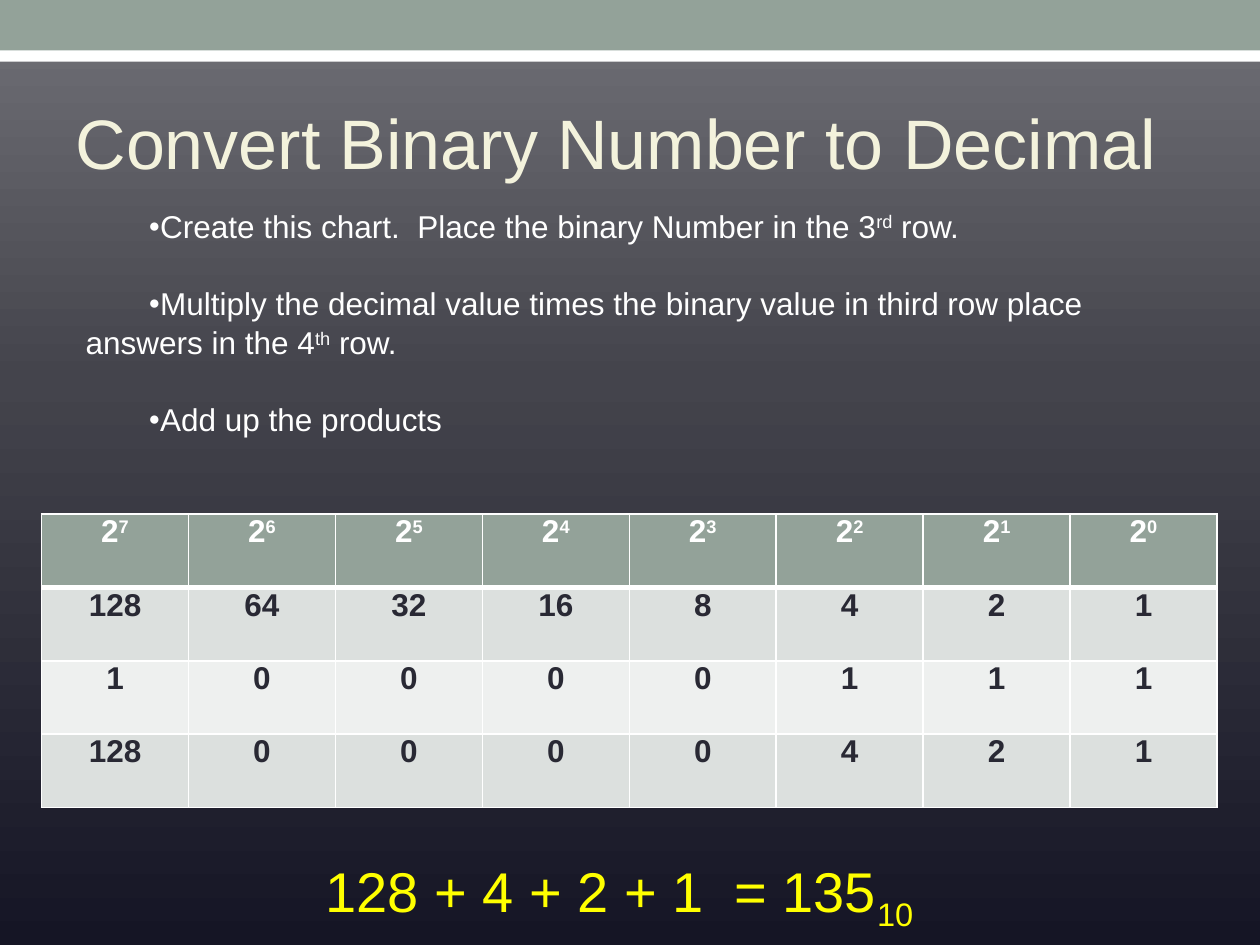
from lxml.etree import SubElement
from pptx import Presentation
from pptx.dml.color import RGBColor
from pptx.enum.shapes import MSO_SHAPE
from pptx.enum.text import MSO_ANCHOR, MSO_AUTO_SIZE, PP_ALIGN
from pptx.oxml.ns import qn
from pptx.util import Inches, Pt

WHITE = RGBColor(0xFF, 0xFF, 0xFF)
SAGE = RGBColor(0x93, 0xA2, 0x99)
CREAM = RGBColor(0xF3, 0xF2, 0xDC)
YELLOW = RGBColor(0xFF, 0xFF, 0x00)
DARK = RGBColor(0x29, 0x29, 0x34)
BAND_DARK = RGBColor(0xDC, 0xE0, 0xDE)
BAND_LIGHT = RGBColor(0xEE, 0xF0, 0xEF)
BACKGROUND_STOPS = [(0, RGBColor(0x71, 0x71, 0x77)),
                    (40, RGBColor(0x44, 0x44, 0x4C)),
                    (100, RGBColor(0x15, 0x15, 0x25))]
FONT = "Arial"

# Text is a list of (words, baseline shift in percent).
TITLE = [("Convert Binary Number to Decimal", 0)]
STEPS = [
    [("Create this chart.  Place the binary Number in the 3", 0), ("rd", 30), (" row.", 0)],
    [("Multiply the decimal value times the binary value in third row place "
      "answers in the 4", 0), ("th", 30), (" row.", 0)],
    [("Add up the products", 0)],
]
RESULT = [("128 + 4 + 2 + 1  = 135", 0), ("10", -25)]
BITS = [1, 0, 0, 0, 0, 1, 1, 1]

powers = list(range(len(BITS) - 1, -1, -1))
place_values = [2 ** power for power in powers]
products = [bit * value for bit, value in zip(BITS, place_values)]
TABLE_ROWS = [[[("2", 0), (str(power), 30)] for power in powers]] + [
    [[(str(number), 0)] for number in numbers]
    for numbers in (place_values, BITS, products)]
ROW_FILLS = [SAGE, BAND_DARK, BAND_LIGHT, BAND_DARK]


def add_runs(paragraph, parts, size, color, bold=False):
    for words, baseline in parts:
        run = paragraph.add_run()
        run.text = words
        run.font.name = FONT
        run.font.size = Pt(size)
        run.font.bold = bold
        run.font.color.rgb = color
        if baseline:
            run.font._element.set("baseline", str(baseline * 1000))


def place(shape, left, top, width, height):
    shape.left, shape.top = Inches(left), Inches(top)
    shape.width, shape.height = Inches(width), Inches(height)


def add_color(parent, color):
    return SubElement(parent, qn("a:srgbClr"), val=str(color))


def paint_background(slide):
    fill = slide.background.fill
    fill.gradient()
    fill.gradient_angle = 270
    stops = slide.background._cSld.find(".//" + qn("a:gsLst"))
    for stop in list(stops):
        stops.remove(stop)
    for position, color in BACKGROUND_STOPS:
        add_color(SubElement(stops, qn("a:gs"), pos=str(position * 1000)), color)


def add_bar(slide, top, height, color):
    bar = slide.shapes.add_shape(MSO_SHAPE.RECTANGLE, 0, Inches(top), Inches(10), Inches(height))
    bar.shadow.inherit = False
    bar.fill.solid()
    bar.fill.fore_color.rgb = color
    bar.line.fill.background()
    return bar


def set_borders(cell, top, bottom):
    properties = cell._tc.get_or_add_tcPr()
    for side, width in (("L", 1), ("R", 1), ("T", top), ("B", bottom)):
        line = SubElement(properties, qn("a:ln" + side), w=str(Pt(width)))
        add_color(SubElement(line, qn("a:solidFill")), WHITE)


def add_bullet(paragraph):
    """Give the paragraph a small white bullet on an indented first line."""
    properties = paragraph._p.get_or_add_pPr()
    properties.set("marL", "0")
    properties.set("indent", str(Inches(0.5)))
    add_color(SubElement(properties, qn("a:buClr")), WHITE)
    SubElement(properties, qn("a:buSzPct"), val="61000")
    SubElement(properties, qn("a:buFont"), typeface=FONT)
    SubElement(properties, qn("a:buChar"), char="●")


def add_binary_table(slide):
    row_count, column_count = len(TABLE_ROWS), len(BITS)
    table = slide.shapes.add_table(row_count, column_count, Inches(0.33), Inches(4.08),
                                   Inches(9.33), Inches(2.33)).table
    for row_index, (row, fill) in enumerate(zip(TABLE_ROWS, ROW_FILLS)):
        for column_index, parts in enumerate(row):
            cell = table.cell(row_index, column_index)
            cell.margin_left = cell.margin_right = cell.margin_top = cell.margin_bottom = 0
            set_borders(cell, 3 if row_index == 1 else 1, 3 if row_index == 0 else 1)
            cell.fill.solid()
            cell.fill.fore_color.rgb = fill
            paragraph = cell.text_frame.paragraphs[0]
            paragraph.alignment = PP_ALIGN.CENTER
            add_runs(paragraph, parts, 18, WHITE if row_index == 0 else DARK, bold=True)


def main():
    presentation = Presentation()
    presentation.slide_width, presentation.slide_height = Inches(10), Inches(7.5)
    slide = presentation.slides.add_slide(presentation.slide_layouts[1])
    paint_background(slide)
    title, body = slide.shapes.title, slide.placeholders[1]

    bars = [add_bar(slide, 0.24, 0.25, WHITE), add_bar(slide, 0, 0.4, SAGE)]
    for bar in bars:
        title._element.addprevious(bar._element)

    place(title, 0.5, 0.58, 9, 1.08)
    title.text_frame.auto_size = MSO_AUTO_SIZE.NONE
    title.text_frame.vertical_anchor = MSO_ANCHOR.MIDDLE
    heading = title.text_frame.paragraphs[0]
    heading.alignment = PP_ALIGN.LEFT
    add_runs(heading, TITLE, 40, CREAM)

    add_binary_table(slide)

    place(body, 0.58, 1.58, 9, 2.52)
    frame = body.text_frame
    frame.auto_size = MSO_AUTO_SIZE.NONE
    for index, step in enumerate(STEPS):
        paragraph = frame.add_paragraph() if index else frame.paragraphs[0]
        paragraph.line_spacing = 1.04
        paragraph.space_before = Pt(0)
        paragraph.space_after = Pt(21.5)
        add_bullet(paragraph)
        add_runs(paragraph, step, 18, WHITE)

    result = slide.shapes.add_textbox(0, Inches(6.75), Inches(9.83), Inches(0.64))
    result.text_frame.word_wrap = True
    total = result.text_frame.paragraphs[0]
    total.alignment = PP_ALIGN.CENTER
    add_runs(total, RESULT, 32, YELLOW)

    presentation.save("out.pptx")


if __name__ == "__main__":
    main()
